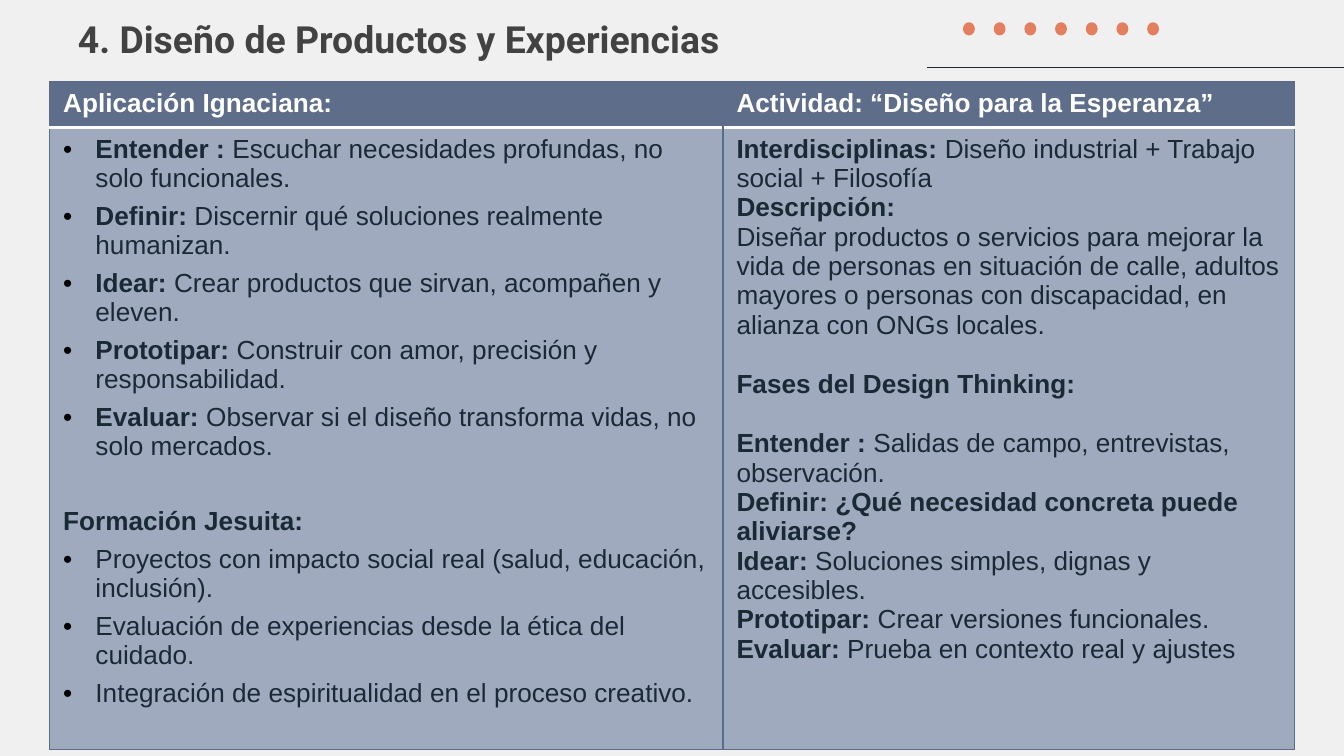
"""Build the slide on product and experience design."""
from lxml import etree
from pptx import Presentation
from pptx.dml.color import RGBColor
from pptx.enum import shapes, text
from pptx.oxml import ns
from pptx.util import Inches, Pt

BACKGROUND = RGBColor(0xF0, 0xF0, 0xF0)
TITLE = RGBColor(0x42, 0x42, 0x42)
WHITE = RGBColor(0xFF, 0xFF, 0xFF)
INK = RGBColor(0x1A, 0x2A, 0x35)
SLATE = RGBColor(0x5E, 0x6E, 0x8A)
MIST = RGBColor(0xA0, 0xAA, 0xBE)
BORDER = RGBColor(0x5B, 0x6B, 0x88)
CORAL = RGBColor(0xE3, 0x7E, 0x5F)
BLACK = RGBColor(0, 0, 0)
NO_STYLE = "{2D5ABB26-0587-4C30-8999-92F81FD0307C}"

HEADING = "4. Diseño de Productos y Experiencias"
HEADERS = ["Aplicación Ignaciana:", "Actividad:\u00a0“Diseño para la Esperanza”"]
APPLICATION = [
    ("Entender : ", "Escuchar necesidades profundas, no solo funcionales."),
    ("Definir: ", "Discernir qué soluciones realmente humanizan."),
    ("Idear: ", "Crear productos que sirvan, acompañen y eleven."),
    ("Prototipar: ", "Construir con amor, precisión y responsabilidad."),
    ("Evaluar: ", "Observar si el diseño transforma vidas, no solo mercados."),
    ("Formación Jesuita:", ""),
    ("", "Proyectos con impacto social real (salud, educación, inclusión)."),
    ("", "Evaluación de experiencias desde la ética del cuidado."),
    ("", "Integración de espiritualidad en el proceso creativo."),
]
ACTIVITY = [
    ("Interdisciplinas: ", "Diseño industrial + Trabajo social + Filosofía"),
    ("Descripción:\n",
     "Diseñar productos o servicios para mejorar la vida de personas en situación "
     "de calle, adultos mayores o personas con discapacidad, en alianza con ONGs locales."),
    ("Fases del Design Thinking:", ""),
    ("Entender : ", "Salidas de campo, entrevistas, observación."),
    ("Definir: ¿Qué necesidad concreta puede aliviarse?", ""),
    ("Idear: ", "Soluciones simples, dignas y accesibles."),
    ("Prototipar: ", "Crear versiones funcionales."),
    ("Evaluar: ", "Prueba en contexto real y ajustes"),
]
APPLICATION_GAPS = {5: 22.5}
ACTIVITY_GAPS = {2: 16, 3: 16}
COLUMNS = [5.01, 4.25]
ROWS = [0.34, 4.63]
DOTS = 7


def add_xml(parent, tag, **attrs):
    return etree.SubElement(parent, ns.qn(tag), attrs)


def add_border(cell, side, color, width):
    ln = add_xml(cell._tc.get_or_add_tcPr(), f"a:ln{side}", w=str(Pt(width)))
    if color is None:
        add_xml(ln, "a:noFill")
    else:
        add_xml(add_xml(ln, "a:solidFill"), "a:srgbClr", val=str(color))


def style_cell(cell, borders, fill):
    for side, (color, width) in zip("LRTB", borders):
        add_border(cell, side, color, width)
    cell.fill.solid()
    cell.fill.fore_color.rgb = fill


def add_bullet(p):
    pPr = p._p.get_or_add_pPr()
    pPr.set("marL", str(Inches(0.24)))
    pPr.set("indent", str(-Inches(0.24)))
    add_xml(add_xml(pPr, "a:buClr"), "a:srgbClr", val=str(BLACK))
    add_xml(pPr, "a:buFont", typeface="Arial")
    add_xml(pPr, "a:buChar", char="•")


def add_run(p, words, bold, color):
    r = p.add_run()
    r.text = words.rstrip("\n")
    r.font.name, r.font.size, r.font.bold = "Arial", Pt(14), bold
    r.font.color.rgb = color
    if words.endswith("\n"):
        add_xml(add_xml(p._p, "a:br"), "a:rPr", sz="1400")


def fill_body(cell, items, gaps, bulleted):
    tf = cell.text_frame
    for i, (label, body) in enumerate(items):
        p = tf.paragraphs[0] if i == 0 else tf.add_paragraph()
        if bulleted:
            p.space_after = Pt(2.2)
            if body:
                add_bullet(p)
        if i:
            p.space_before = Pt(gaps.get(i, 2.2 if bulleted else 0))
        for words, bold in ((label, True), (body, False)):
            if words:
                add_run(p, words, bold, INK)


def add_title(s):
    sp = s.shapes.title
    sp.left, sp.top, sp.width, sp.height = (Inches(v) for v in (0.48, 0.15, 9.58, 0.59))
    tf = sp.text_frame
    tf.text = HEADING
    tf.word_wrap = True
    tf.auto_size = text.MSO_AUTO_SIZE.NONE
    tf.vertical_anchor = text.MSO_ANCHOR.TOP
    p = tf.paragraphs[0]
    p.alignment = text.PP_ALIGN.LEFT
    p.line_spacing, p.space_before, p.space_after = Pt(18), Pt(0), Pt(2.2)
    font = p.runs[0].font
    font.name, font.size, font.bold = "Roboto", Pt(20), True
    font.color.rgb = TITLE


def add_content_table(s):
    frame = s.shapes.add_table(2, 2, Inches(0.37), Inches(0.61),
                               Inches(sum(COLUMNS)), Inches(sum(ROWS)))
    table = frame.table
    table.horz_banding = False
    table._tbl.tblPr.find(ns.qn("a:tableStyleId")).text = NO_STYLE
    for column, width in zip(table.columns, COLUMNS):
        column.width = Inches(width)
    for row, height in zip(table.rows, ROWS):
        row.height = Inches(height)
    edge, rule, none = (BORDER, 0.75), (WHITE, 2), (None, 0)
    for i, header in enumerate(HEADERS):
        cell = table.cell(0, i)
        sides = (none, edge) if i else (edge, none)
        style_cell(cell, (*sides, edge, rule), SLATE)
        add_run(cell.text_frame.paragraphs[0], header, True, WHITE)
        style_cell(table.cell(1, i), (edge, edge, rule, edge), MIST)
    fill_body(table.cell(1, 0), APPLICATION, APPLICATION_GAPS, True)
    fill_body(table.cell(1, 1), ACTIVITY, ACTIVITY_GAPS, False)


def add_ornament(s):
    group = s.shapes.add_group_shape()
    for i in range(DOTS):
        dot = group.shapes.add_shape(shapes.MSO_SHAPE.OVAL, Inches(7.18 + i * 1.37 / (DOTS - 1)),
                                     Inches(0.18), Inches(0.06), Inches(0.07))
        dot.shadow.inherit = False
        dot.fill.solid()
        dot.fill.fore_color.rgb = dot.line.color.rgb = CORAL
        dot.line.width = Pt(2)
    line = group.shapes.add_connector(shapes.MSO_CONNECTOR.STRAIGHT, Inches(6.9), Inches(0.5),
                                      Inches(10), Inches(0.5))
    line.line.color.rgb = INK
    line.line.width = Pt(0.75)
    add_xml(line._element.spPr, "a:effectLst")


def main():
    prs = Presentation()
    prs.slide_width, prs.slide_height = Inches(10), Inches(5.625)
    s = prs.slides.add_slide(prs.slide_layouts[5])
    s.background.fill.solid()
    s.background.fill.fore_color.rgb = BACKGROUND
    add_title(s)
    add_content_table(s)
    add_ornament(s)
    prs.save("out.pptx")


if __name__ == "__main__":
    main()
